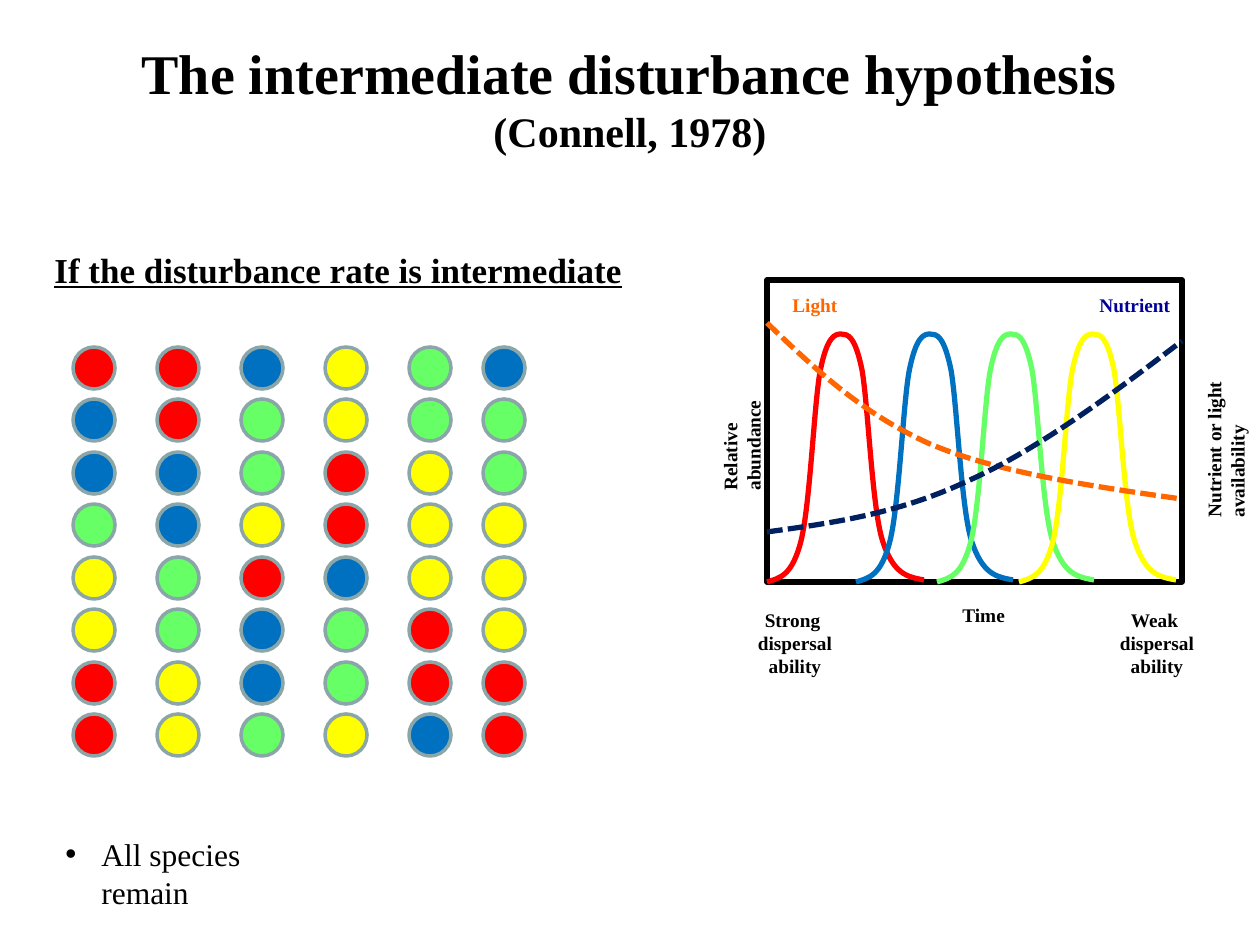
"""Build the intermediate disturbance hypothesis slide."""
from dataclasses import dataclass

import lxml.etree
import pptx
import pptx.dml.color
import pptx.enum.dml
import pptx.enum.shapes
import pptx.enum.text
import pptx.oxml.ns
import pptx.shapes.base
import pptx.shapes.shapetree
import pptx.text.text
import pptx.util

SCALE = 914400 / 126
FONT = "Times New Roman"
BLACK, RED, BLUE, GREEN, YELLOW = "000000", "FF0000", "0070C0", "66FF66", "FFFF00"
ORANGE, NAVY, RIM = "FF6600", "002060", "8AA6A8"
LEFT = pptx.enum.text.PP_ALIGN.LEFT
CENTER = pptx.enum.text.PP_ALIGN.CENTER
Shapes = pptx.shapes.shapetree._BaseGroupShapes
Point = tuple[int, int]
qn = pptx.oxml.ns.qn

SPECIES = {"R": RED, "B": BLUE, "G": GREEN, "Y": YELLOW}
COLUMNS = {73: "RBBGYYRR", 157: "RRBBGGYY", 241: "BGGYRBBG",
           325: "YYRRBGGY", 409: "GGYYYRRB", 483: "BGGYYYRR"}
HUMP_STARTS = {767: RED, 856: BLUE, 937: GREEN, 1019: YELLOW}
HUMP = [(0, 582), (13, 578), (25, 576), (34, 541), (43, 505), (47, 406), (53, 372),
        (60, 336), (68, 334), (74, 334), (81, 334), (88, 336), (95, 370),
        (101, 404), (105, 505), (115, 539), (126, 575), (141, 577), (157, 580)]
LIGHT = [(767, 323), (814, 368), (861, 413), (930, 444),
         (999, 473), (1090, 486), (1181, 499)]
NUTRIENT = [(767, 532), (833, 523), (898, 514), (968, 481),
            (1037, 450), (1110, 396), (1182, 341)]


@dataclass(frozen=True)
class Label:
    """Text lines with their place and look."""
    lines: tuple[str, ...]
    left: int
    top: int
    width: int
    height: int
    sizes: tuple[int, ...] = (11,)
    color: str = BLACK
    align: pptx.enum.text.PP_ALIGN = LEFT
    bold: bool = True
    underline: bool = False
    wrap: bool = False
    rotation: int = 0


TITLE = Label(("The intermediate disturbance hypothesis", "(Connell, 1978)"),
              0, 32, 1260, 131, (32, 24), align=CENTER, wrap=True)
HEADING = Label(("If the disturbance rate is intermediate",), 42, 242, 609, 55,
                (20,), underline=True, wrap=True)
CONCLUSION = Label(("All species remain",), 53, 829, 295, 50, (18,), bold=False)
GRAPH_LABELS = [
    Label(("Time",), 950, 597, 68, 37),
    Label(("Relative abundance",), 681, 414, 120, 58, wrap=True, rotation=270),
    Label(("Nutrient or light availability",), 1140, 416, 170, 58, wrap=True, rotation=270),
    Label(("Nutrient",), 1087, 287, 97, 37, color="000099"),
    Label(("Light",), 780, 287, 71, 37, color=ORANGE),
]
DISPERSAL_LABELS = [
    Label((f"{strength} ", "dispersal", "ability"), left, 602, 100, 83, align=CENTER)
    for strength, left in (("Weak", 1107), ("Strong", 745))
]


def px(length: float) -> int:
    """Turn pixels into EMU."""
    return round(length * SCALE)


def rgb(color: str) -> pptx.dml.color.RGBColor:
    """Turn a hex string into a colour."""
    return pptx.dml.color.RGBColor.from_string(color)


def style(shape: pptx.shapes.base.BaseShape, fill: str | None, line: str, width: int) -> None:
    """Set fill and outline, and remove the shadow."""
    shape.shadow.inherit = False
    if fill is None:
        shape.fill.background()
    else:
        shape.fill.solid()
        shape.fill.fore_color.rgb = rgb(fill)
    shape.line.color.rgb = rgb(line)
    shape.line.width = pptx.util.Pt(width)


def draw_label(shapes: Shapes, label: Label) -> pptx.text.text.TextFrame:
    """Add a text box holding one paragraph per line."""
    box = shapes.add_textbox(*map(px, (label.left, label.top, label.width, label.height)))
    box.rotation = label.rotation
    frame = box.text_frame
    frame.word_wrap = label.wrap
    for index, line in enumerate(label.lines):
        para = frame.add_paragraph() if index else frame.paragraphs[0]
        para.alignment = label.align
        span = para.add_run()
        span.text = line
        span.font.name = FONT
        span.font.size = pptx.util.Pt(label.sizes[min(index, len(label.sizes) - 1)])
        span.font.bold = label.bold
        span.font.underline = label.underline
        span.font.color.rgb = rgb(label.color)
    return frame


def add_bullet(para: pptx.text.text._Paragraph, indent: int) -> None:
    """Give a paragraph a round bullet with a hanging indent."""
    properties = para._p.get_or_add_pPr()
    properties.set("marL", str(px(indent)))
    properties.set("indent", str(-px(indent)))
    lxml.etree.SubElement(properties, qn("a:buFont")).set("typeface", "Arial")
    lxml.etree.SubElement(properties, qn("a:buChar")).set("char", "•")


def draw_curve(shapes: Shapes, points: list[Point], color: str, dashed: bool = False) -> None:
    """Draw a Bézier chain: a knot, then two controls and a knot per piece."""
    knots = points[::3]
    builder = shapes.build_freeform(*knots[0], scale=SCALE)
    builder.add_line_segments(knots[1:], close=False)
    curve = builder.convert_to_shape()
    style(curve, None, color, 3)
    if dashed:
        curve.line.dash_style = pptx.enum.dml.MSO_LINE.SQUARE_DOT
    left, top = (min(values) for values in zip(*knots))
    for piece, segment in enumerate(list(curve._element.iter(qn("a:lnTo")))):
        segment.tag = qn("a:cubicBezTo")
        for index, (x, y) in enumerate(points[3 * piece + 1:3 * piece + 3]):
            control = lxml.etree.Element(qn("a:pt"), x=str(x - left), y=str(y - top))
            segment.insert(index, control)


def draw_graph(shapes: Shapes) -> None:
    """Draw the succession graph with its frame, curves and labels."""
    frame = shapes.add_shape(pptx.enum.shapes.MSO_SHAPE.RECTANGLE,
                             *map(px, (767, 280, 415, 302)))
    style(frame, None, BLACK, 3)
    for start, color in HUMP_STARTS.items():
        draw_curve(shapes, [(start + x, y) for x, y in HUMP], color)
    draw_curve(shapes, LIGHT, ORANGE, dashed=True)
    draw_curve(shapes, NUTRIENT, NAVY, dashed=True)
    for label in GRAPH_LABELS:
        draw_label(shapes, label)


def draw_species(shapes: Shapes) -> None:
    """Draw the grid of coloured individuals."""
    for left, column in COLUMNS.items():
        for row, species in enumerate(column):
            circle = shapes.add_shape(pptx.enum.shapes.MSO_SHAPE.OVAL, px(left),
                                      px(347 + row * 105 // 2), px(42), px(42))
            style(circle, SPECIES[species], RIM, 2)


def main() -> None:
    """Build and save the deck."""
    deck = pptx.Presentation()
    deck.slide_width, deck.slide_height = px(1260), px(945)
    page = deck.slides.add_slide(deck.slide_layouts[6])
    draw_label(page.shapes, TITLE)
    draw_graph(page.shapes.add_group_shape().shapes)
    for label in [*DISPERSAL_LABELS, HEADING]:
        draw_label(page.shapes, label)
    draw_species(page.shapes)
    add_bullet(draw_label(page.shapes, CONCLUSION).paragraphs[0], 36)
    deck.save("out.pptx")


if __name__ == "__main__":
    main()
